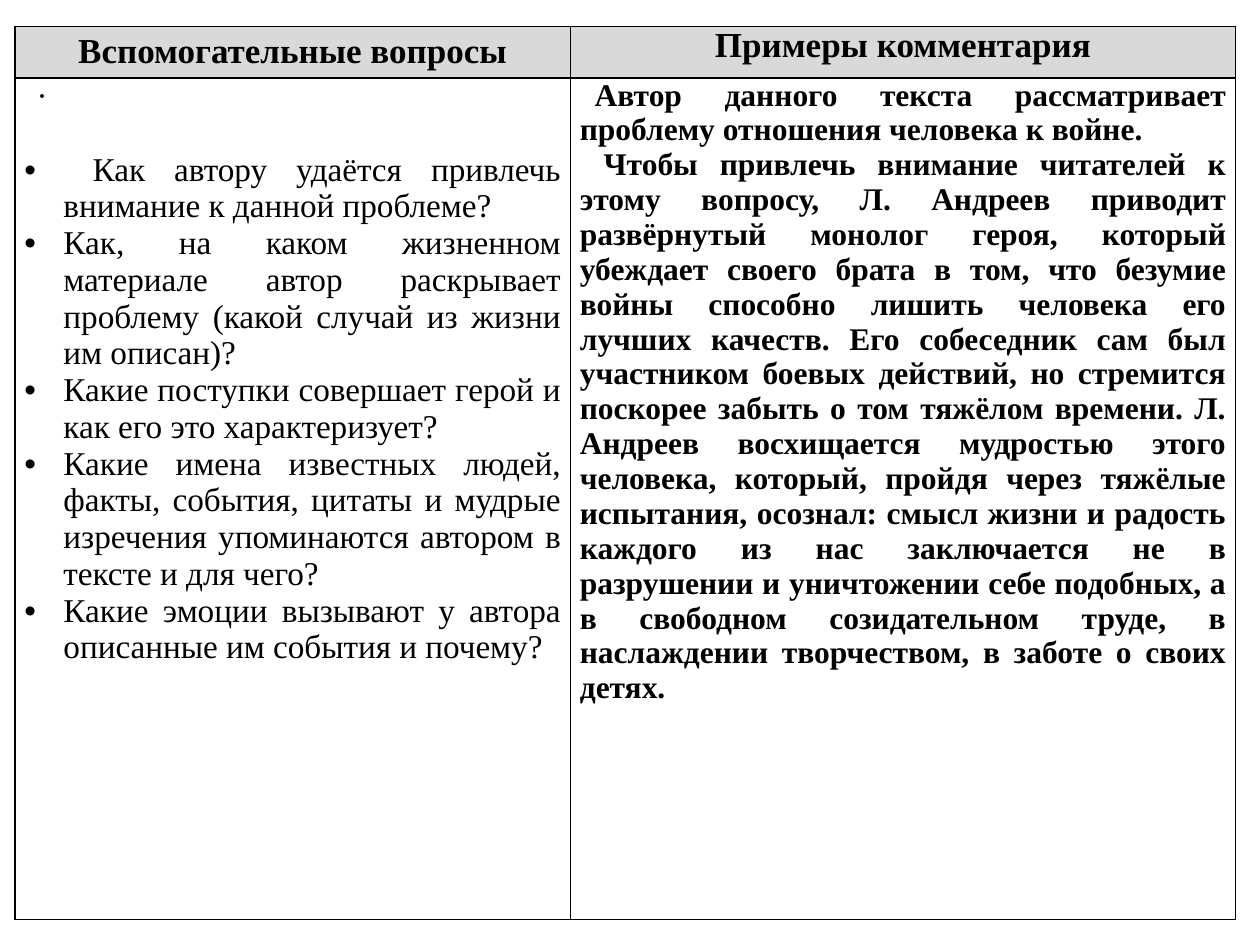
"""Build a slide with a two-column table of guiding questions and a sample commentary."""
import pptx
import pptx.dml.color
import pptx.enum.text
import pptx.oxml
import pptx.oxml.ns
import pptx.util
from pptx.util import Cm

COLORS = {"ink": "000000", "header": "D9D9D9", "body": "FFFFFF"}
ALIGN = pptx.enum.text.PP_ALIGN
HANGING = 0.79

headings = ["Вспомогательные вопросы", "Примеры комментария"]
questions = [
    " Как автору удаётся привлечь внимание к данной проблеме?",
    "Как, на каком жизненном материале автор раскрывает проблему (какой случай из жизни им описан)?",
    "Какие поступки совершает герой и как его это характеризует?",
    "Какие имена известных людей, факты, события, цитаты и мудрые изречения "
    "упоминаются автором в тексте и для чего?",
    "Какие эмоции вызывают у автора описанные им события и почему?",
]
commentary = [
    ("Автор данного текста рассматривает проблему отношения человека к войне.", 0.3),
    ("Чтобы привлечь внимание читателей к этому вопросу, Л. Андреев приводит "
     "развёрнутый монолог героя, который убеждает своего брата в том, что безумие "
     "войны способно лишить человека его лучших качеств. Его собеседник сам был "
     "участником боевых действий, но стремится поскорее забыть о том тяжёлом времени. "
     "Л. Андреев восхищается мудростью этого человека, который, пройдя через тяжёлые "
     "испытания, осознал: смысл жизни и радость каждого из нас заключается не в "
     "разрушении и уничтожении себе подобных, а в свободном созидательном труде, "
     "в наслаждении творчеством, в заботе о своих детях.", 0.48),
]


def write(cell, text, size, align, bold=False, left=0, indent=0, bullet=False):
    """Add one formatted paragraph to a cell and return it."""
    frame = cell.text_frame
    line = frame.add_paragraph() if cell.text else frame.paragraphs[0]
    line.text = text
    line.alignment = align
    line.font.name = "Times New Roman"
    line.font.size = pptx.util.Pt(size)
    line.font.bold = bold
    line.font.color.rgb = pptx.dml.color.RGBColor.from_string(COLORS["ink"])
    properties = line._p.get_or_add_pPr()
    properties.set("marL", str(Cm(left)))
    properties.set("indent", str(Cm(indent)))
    if bullet:
        for tag in ('a:buFont {} typeface="Arial"', 'a:buChar {} char="•"'):
            xml = "<" + tag.format(pptx.oxml.ns.nsdecls("a")) + "/>"
            mark = pptx.oxml.parse_xml(xml)
            properties.insert_element_before(mark, "a:tabLst", "a:defRPr", "a:extLst")
    return line


def draw_borders(cell):
    """Give all four sides of a cell a thin solid line."""
    properties = cell._tc.get_or_add_tcPr()
    for position, side in enumerate(("lnL", "lnR", "lnT", "lnB")):
        border = pptx.oxml.parse_xml(
            f'<a:{side} {pptx.oxml.ns.nsdecls("a")} w="12700"><a:solidFill>'
            f'<a:srgbClr val="{COLORS["ink"]}"/></a:solidFill></a:{side}>')
        properties.insert(position, border)


deck = pptx.Presentation()
deck.slide_width, deck.slide_height = Cm(25.4), Cm(19.05)
slide = deck.slides.add_slide(deck.slide_layouts[6])

grid = slide.shapes.add_table(2, 2, Cm(0.3), Cm(0.53), Cm(24.61), Cm(18.01)).table
grid.first_row = False
grid.horz_banding = False
for column, width in zip(grid.columns, (11.2, 13.41)):
    column.width = Cm(width)
for row, height, fill in zip(grid.rows, (1.04, 16.97), ("header", "body")):
    row.height = Cm(height)
    for cell in row.cells:
        cell.margin_left = cell.margin_right = Cm(0.19)
        cell.margin_top = cell.margin_bottom = 0
        cell.fill.solid()
        cell.fill.fore_color.rgb = pptx.dml.color.RGBColor.from_string(COLORS[fill])
        draw_borders(cell)

for number, heading in enumerate(headings):
    write(grid.cell(0, number), heading, 20, ALIGN.CENTER, bold=True)
grid.cell(0, 0).vertical_anchor = pptx.enum.text.MSO_ANCHOR.MIDDLE

question_cell, commentary_cell = grid.cell(1, 0), grid.cell(1, 1)
dot = write(question_cell, "·", 19, ALIGN.JUSTIFY, indent=0.25)
dot.space_after = pptx.util.Pt(21)
for question in questions:
    write(question_cell, question, 19, ALIGN.JUSTIFY,
          left=HANGING, indent=-HANGING, bullet=True)

for passage, first_indent in commentary:
    write(commentary_cell, passage, 18, ALIGN.JUSTIFY, bold=True, indent=first_indent)
commentary_cell.text_frame.paragraphs[0].space_before = pptx.util.Pt(1.5)

deck.save("out.pptx")
